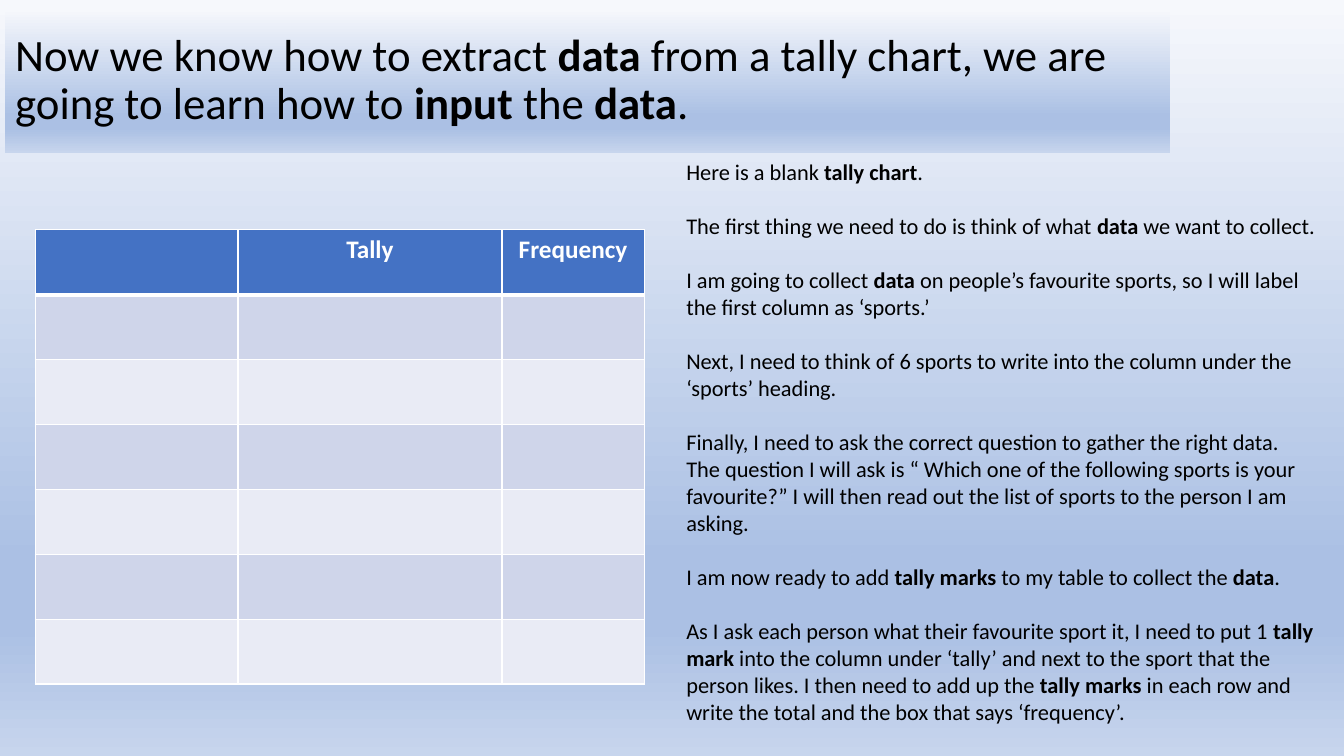
"""Build the tally chart lesson slide."""
from copy import deepcopy

from lxml import etree
from pptx import Presentation
from pptx import util as u
from pptx.dml.color import RGBColor
from pptx.enum import text
from pptx.oxml.ns import qn

COLUMNS, ROWS = 128, 72
GRADIENT = [(0, "F6F8FC"), (0.74, "ABC0E4"), (0.83, "ABC0E4"), (1, "C7D5ED")]
TITLE = ("Now we know how to extract **data** from a tally chart, "
         "we are going to learn how to **input** the **data**.")
STEPS = [
    "Here is a blank **tally chart**.",
    "The first thing we need to do is think of what **data** we want to collect.",
    "I am going to collect **data** on people’s favourite sports, so I will label "
    "the first column as ‘sports.’",
    "Next, I need to think of 6 sports to write into the column under the "
    "‘sports’ heading.",
    "Finally, I need to ask the correct question to gather the right data. "
    "The question I will ask is “ Which one of the following sports is your "
    "favourite?” I will then read out the list of sports to the person I am asking.",
    "I am now ready to add **tally marks** to my table to collect the **data**.",
    "As I ask each person what their favourite sport it, I need to put 1 "
    "**tally mark** into the column under ‘tally’ and next to the sport that the "
    "person likes. I then need to add up the **tally marks** in each row and "
    "write the total and the box that says ‘frequency’.",
]
HEADINGS = ["", "Tally", "Frequency"]
TABLE_COLUMNS = [19.3, 25.15, 13.54]
TABLE_ROWS, ROW_HEIGHT = 7, 6.18


def rgb(value):
    """Turn a hex string into a colour."""
    return RGBColor.from_string(value)


class LessonSlide:
    """Hold the style and the slide, placing elements on a 128 by 72 grid."""

    font = "Calibri"
    ink, white = "000000", "FFFFFF"
    header, bands = "4472C4", ["E9EBF5", "CFD5EA"]

    def __init__(self, presentation):
        """Add a title-only slide with a gradient background."""
        self.column = presentation.slide_width / COLUMNS
        self.row = presentation.slide_height / ROWS
        self.slide = presentation.slides.add_slide(presentation.slide_layouts[5])
        self.gradient(self.slide.background.fill, self.slide.element)

    def box(self, left, top, width, height):
        """Convert grid columns and rows to lengths."""
        return [u.Emu(round(value * step)) for value, step in
                zip((left, top, width, height), (self.column, self.row) * 2)]

    def gradient(self, fill, element):
        """Fill with the vertical blue gradient."""
        fill.gradient()
        fill.gradient_angle = 270
        stops = element.find(".//" + qn("a:gsLst"))
        while len(stops) < len(GRADIENT):
            stops.append(deepcopy(stops[0]))
        for stop, (position, colour) in zip(fill.gradient_stops, GRADIENT):
            stop.position = position
            stop.color.rgb = rgb(colour)

    def style(self, run, size, colour, bold):
        """Format one run."""
        run.font.name = self.font
        run.font.size = u.Pt(size)
        run.font.bold = bold
        run.font.color.rgb = rgb(colour)

    def add_runs(self, paragraph, marked, size):
        """Add text whose bold parts stand between double asterisks."""
        for index, part in enumerate(marked.split("**")):
            run = paragraph.add_run()
            run.text = part
            self.style(run, size, self.ink, index % 2 == 1)

    def title(self, marked, *area):
        """Place and fill the title placeholder."""
        shape = self.slide.shapes.title
        shape.left, shape.top, shape.width, shape.height = self.box(*area)
        self.gradient(shape.fill, shape.element)
        frame = shape.text_frame
        frame.word_wrap = True
        frame.auto_size = text.MSO_AUTO_SIZE.NONE
        frame.vertical_anchor = text.MSO_ANCHOR.MIDDLE
        paragraph = frame.paragraphs[0]
        paragraph.alignment = text.PP_ALIGN.LEFT
        paragraph.line_spacing = 0.9
        self.add_runs(paragraph, marked, 32)

    def steps(self, entries, *area):
        """Add the instructions, one line apart."""
        frame = self.slide.shapes.add_textbox(*self.box(*area)).text_frame
        frame.word_wrap = True
        frame.auto_size = text.MSO_AUTO_SIZE.SHAPE_TO_FIT_TEXT
        for index, entry in enumerate(entries):
            paragraph = frame.add_paragraph() if index else frame.paragraphs[0]
            paragraph.space_before = u.Pt(19.5 if index else 0)
            self.add_runs(paragraph, entry, 16)

    def border(self, cell, side, width):
        """Draw one white cell border."""
        properties = cell._tc.get_or_add_tcPr()
        line = etree.SubElement(properties, qn(f"a:ln{side}"), w=str(u.Pt(width)))
        fill = etree.SubElement(line, qn("a:solidFill"))
        etree.SubElement(fill, qn("a:srgbClr"), val=self.white)

    def table(self, left, top):
        """Add the blank tally chart."""
        area = self.box(left, top, sum(TABLE_COLUMNS), TABLE_ROWS * ROW_HEIGHT)
        table = self.slide.shapes.add_table(
            TABLE_ROWS, len(TABLE_COLUMNS), *area).table
        for column, width in zip(table.columns, TABLE_COLUMNS):
            column.width = u.Emu(round(width * self.column))
        for index, row in enumerate(table.rows):
            row.height = u.Emu(round(ROW_HEIGHT * self.row))
            for cell in row.cells:
                for side in "LRTB":
                    thick = (index, side) in [(0, "B"), (1, "T")]
                    self.border(cell, side, 3 if thick else 1)
                cell.fill.solid()
                colour = self.bands[index % 2] if index else self.header
                cell.fill.fore_color.rgb = rgb(colour)
        for cell, heading in zip(table.rows[0].cells, HEADINGS):
            paragraph = cell.text_frame.paragraphs[0]
            paragraph.text = heading
            paragraph.alignment = text.PP_ALIGN.CENTER
            for run in paragraph.runs:
                self.style(run, 18, self.white, True)


def main():
    """Build and save the presentation."""
    presentation = Presentation()
    presentation.slide_width = u.Emu(12192000)
    presentation.slide_height = u.Inches(7.5)
    lesson = LessonSlide(presentation)
    lesson.title(TITLE, 0.48, 0.86, 110.98, 13.73)
    lesson.table(3.36, 21.89)
    lesson.steps(STEPS, 64.42, 14.59, 62.02, 57.79)
    presentation.save("out.pptx")


if __name__ == "__main__":
    main()
